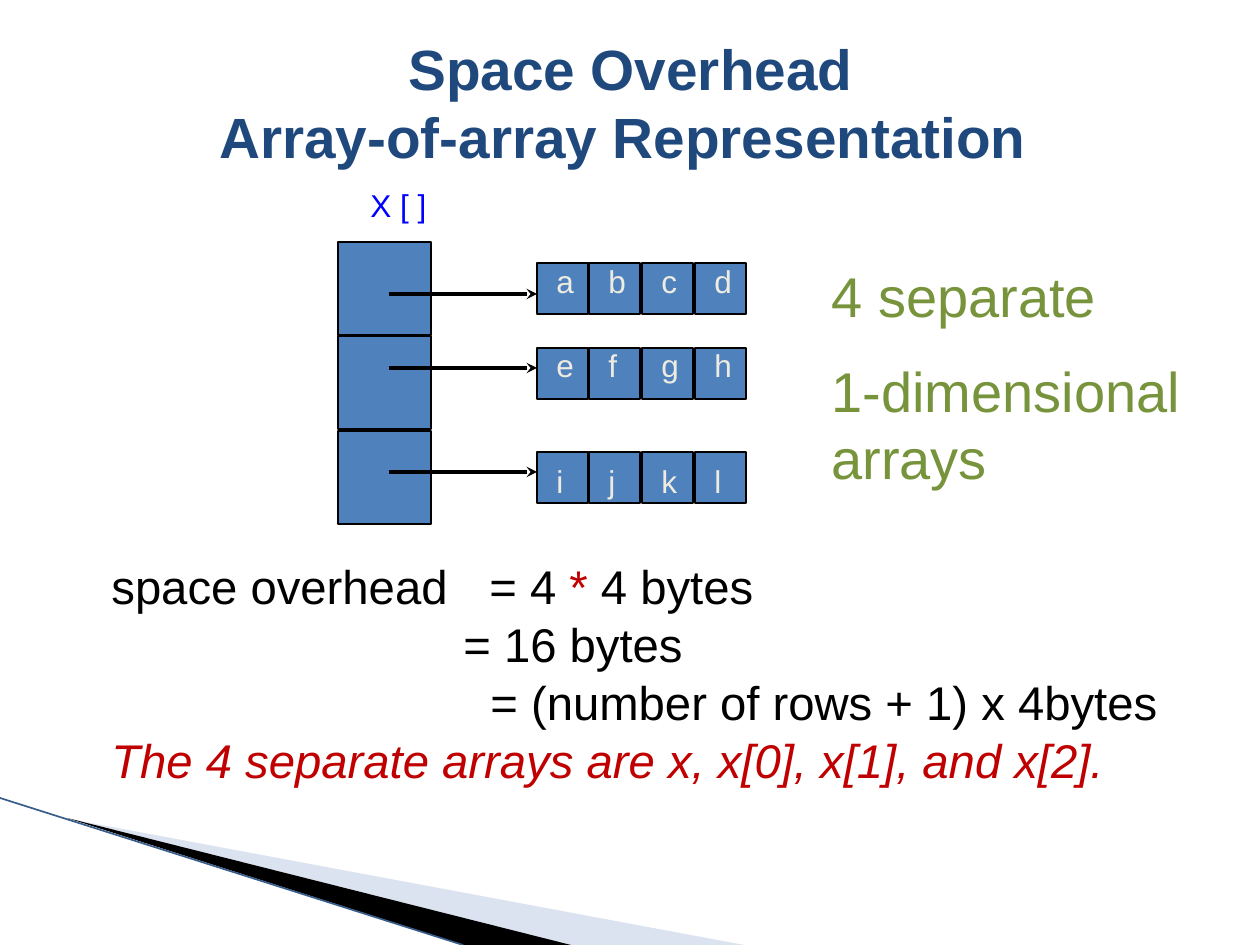
from dataclasses import dataclass

from lxml import etree
from pptx import Presentation
from pptx.dml.color import RGBColor
from pptx.enum.shapes import MSO_CONNECTOR, MSO_SHAPE
from pptx.enum.text import MSO_ANCHOR, PP_ALIGN
from pptx.oxml.ns import qn
from pptx.util import Pt

RECT = MSO_SHAPE.RECTANGLE
STRAIGHT = MSO_CONNECTOR.STRAIGHT
CENTER, LEFT = PP_ALIGN.CENTER, PP_ALIGN.LEFT
MIDDLE, TOP = MSO_ANCHOR.MIDDLE, MSO_ANCHOR.TOP
SCALE = 914400 / 126


def px(n):
    return round(n * SCALE)


@dataclass(frozen=True)
class Theme:
    font: str = "Arial"
    title: str = "1F497D"
    ink: str = "000000"
    accent: str = "C00000"
    note: str = "77933C"
    label: str = "0000FF"
    letter: str = "EEECE1"
    cell: str = "4F81BD"
    wedge: str = "A7B9DB"
    edge: str = "385D8A"
    title_size: float = 32.4
    note_size: int = 32
    body_size: int = 27
    label_size: int = 18


class SlideBuilder:
    def __init__(self, slide, theme):
        self.slide = slide
        self.theme = theme

    def rect(self, x, y, size):
        sp = self.slide.shapes.add_shape(RECT, px(x), px(y), px(size), px(size))
        sp.shadow.inherit = False
        sp.fill.solid()
        sp.fill.fore_color.rgb = RGBColor.from_string(self.theme.cell)
        sp.line.color.rgb = RGBColor.from_string(self.theme.ink)
        sp.line.width = Pt(1)

    def polygon(self, points, color, alpha=None):
        fb = self.slide.shapes.build_freeform(*points[0], scale=SCALE)
        fb.add_line_segments(points[1:], close=True)
        sp = fb.convert_to_shape()
        sp.shadow.inherit = False
        sp.fill.solid()
        sp.fill.fore_color.rgb = RGBColor.from_string(color)
        sp.line.fill.background()
        if alpha:
            clr = sp.fill._xPr.find(qn("a:solidFill"))[0]
            etree.SubElement(clr, qn("a:alpha"), val=str(alpha * 1000))

    def line(self, x1, y1, x2, y2, color, width, arrow=False):
        cxn = self.slide.shapes.add_connector(
            STRAIGHT, px(x1), px(y1), px(x2), px(y2))
        cxn.line.color.rgb = RGBColor.from_string(color)
        cxn.line.width = Pt(width)
        if arrow:
            ln = cxn.line._get_or_add_ln()
            etree.SubElement(ln, qn("a:tailEnd"), type="stealth")
        etree.SubElement(cxn._element.spPr, qn("a:effectLst"))

    def text_box(self, x, y, w, h, anchor=TOP, wrap=True):
        tf = self.slide.shapes.add_textbox(px(x), px(y), px(w), px(h)).text_frame
        tf.word_wrap = wrap
        tf.vertical_anchor = anchor
        return tf

    def paragraph(self, tf, runs, size, align=LEFT, before=0, spacing=None,
                  indent=0, tab=None, bold=False, italic=False):
        first = not tf.paragraphs[0].runs
        p = tf.paragraphs[0] if first else tf.add_paragraph()
        pPr = p._p.get_or_add_pPr()
        pPr.set("marL", str(px(indent)))
        pPr.set("indent", "0")
        if tab:
            tabs = etree.SubElement(pPr, qn("a:tabLst"))
            etree.SubElement(tabs, qn("a:tab"), pos=str(px(tab)), algn="l")
        p.alignment = align
        if spacing:
            p.line_spacing = spacing
        if before and not first:
            p.space_before = Pt(before)
        for text, color in runs:
            if text == "\n":
                p.add_line_break()
                continue
            r = p.add_run()
            r.text = text
            r.font.name = self.theme.font
            r.font.size = Pt(size)
            r.font.bold = bold
            r.font.italic = italic
            r.font.color.rgb = RGBColor.from_string(color)


def add_corner(b):
    t = b.theme
    b.polygon([(69, 819), (744, 945), (571, 945)], t.wedge, alpha=40)
    b.polygon([(67, 818), (571, 945), (464, 945)], t.ink)
    b.line(0, 798, 463, 945, t.edge, 0.95)


def add_text(b):
    t = b.theme
    tf = b.text_box(84, 557, 1155, 274)
    style = {"size": t.body_size, "before": 4, "spacing": 0.9}
    b.paragraph(tf, [("space overhead\t= 4 ", t.ink), ("*", t.accent),
                     (" 4 bytes", t.ink)], indent=15, tab=375, **style)
    b.paragraph(tf, [("= 16 bytes", t.ink)], indent=367, **style)
    b.paragraph(tf, [("= (number of rows + 1) x 4bytes", t.ink)],
                indent=394, **style)
    b.paragraph(tf, [("The 4 separate arrays are x, x[0], x[1], and x[2].",
                      t.accent)], indent=15, italic=True, **style)

    tf = b.text_box(32, 23, 1197, 158, anchor=MIDDLE)
    b.paragraph(tf, [("Space Overhead", t.title), ("\n", t.title),
                     ("Array-of-array Representation ", t.title)],
                t.title_size, align=CENTER, bold=True)

    tf = b.text_box(819, 255, 401, 251)
    for text in ("4 separate", "1-dimensional arrays"):
        b.paragraph(tf, [(text, t.note)], t.note_size, before=16)


def add_diagram(b):
    t = b.theme
    tf = b.text_box(358, 180, 105, 50)
    b.paragraph(tf, [("X [ ]", t.label)], t.label_size)
    for i in range(3):
        b.rect(338, 242 + i * 189 // 2, 93)
    rows = [("abcd", 263, 294, 256), ("efgh", 348, 368, 340),
            ("ijkl", 452, 472, 456)]
    for letters, cell_y, arrow_y, text_y in rows:
        for col, letter in enumerate(letters):
            x = 537 + col * 158 // 3
            b.rect(x, cell_y, 51)
            tf = b.text_box(x + 7, text_y, 42, 54, wrap=False)
            b.paragraph(tf, [(letter, t.letter)], t.label_size)
        b.line(389, arrow_y, 537, arrow_y, t.ink, 2, arrow=True)


def main():
    prs = Presentation()
    prs.slide_width, prs.slide_height = px(1260), px(945)
    s = prs.slides.add_slide(prs.slide_layouts[6])
    b = SlideBuilder(s, Theme())
    add_corner(b)
    add_text(b)
    add_diagram(b)
    prs.save("out.pptx")


if __name__ == "__main__":
    main()
